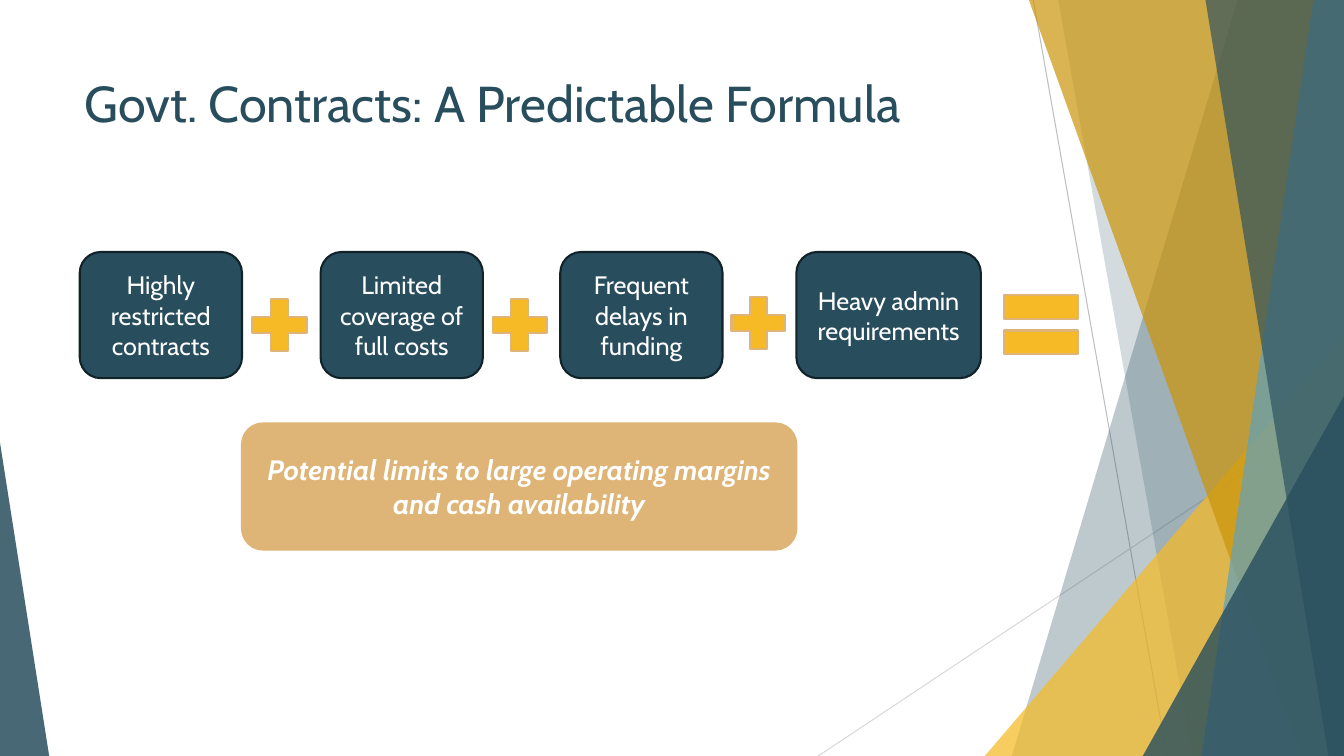
"""Build the slide on the predictable formula of government contracts."""
from dataclasses import dataclass

import lxml.etree
import pptx
import pptx.dml.color
import pptx.enum.shapes
import pptx.enum.text
import pptx.oxml.ns
import pptx.shapes.autoshape
import pptx.shapes.base
import pptx.slide
import pptx.text.text
import pptx.util

Cm = pptx.util.Cm
Kind = pptx.enum.shapes.MSO_SHAPE
Align = pptx.enum.text.PP_ALIGN
Anchor = pptx.enum.text.MSO_ANCHOR

WIDE, HIGH = 33.87, 19.05
FONT = "Cabin"
INK = {
    "teal": "284E5E", "edge": "122229", "gold": "F5BA26", "ochre": "CB9409",
    "sky": "61A1BC", "sand": "DEB477", "white": "FFFFFF",
    "gray": "BFBFBF", "pale": "D9D9D9",
}


@dataclass
class Ray:
    """A thin line that runs down to the foot of the slide."""
    left: float
    top: float
    foot: float
    ink: str


@dataclass
class Slab:
    """A full-height band from a slanted edge to the right side."""
    top: float
    foot: float
    ink: str
    alpha: int


@dataclass
class Wedge:
    """A right triangle that stands on the foot of the slide."""
    left: float
    top: float
    width: float
    apex: float
    ink: str
    alpha: int


@dataclass
class Item:
    """A preset shape of the formula, with optional text."""
    kind: Kind
    left: float
    top: float
    width: float
    height: float
    ink: str
    edge: str
    text: str = ""
    size: int = 18
    strong: bool = False


def term(left: float, width: float, text: str) -> Item:
    """Return one rounded box of the formula."""
    return Item(Kind.ROUNDED_RECTANGLE, left, 6.35, width, 3.18, "teal", "edge", text)


def plus(left: float, top: float) -> Item:
    """Return one plus sign of the formula."""
    return Item(Kind.MATH_PLUS, left, top, 1.85, 1.8, "gold", "sand")


RAYS = [Ray(26.04, 0, 29.41, "gray"), Ray(WIDE, 10.24, 20.62, "pale")]
DECOR = [
    Slab(31.19, 25.5, "teal", 30),
    Slab(26.67, 30.05, "teal", 20),
    Wedge(24.82, 8.46, 9.05, 1, "gold", 72),
    Slab(25.93, 32.79, "ochre", 70),
    Slab(33.1, 30.28, "sky", 70),
    Slab(30.38, 33.48, "teal", 65),
    Wedge(28.8, 9.98, 5.07, 1, "teal", 80),
    Wedge(0, 11.15, 1.24, 0, "teal", 85),
]
ITEMS = [
    term(2.01, 4.09, "Highly restricted contracts"),
    term(8.08, 4.09, "Limited coverage of full costs"),
    term(14.12, 4.09, "Frequent delays in funding"),
    term(20.07, 4.65, "Heavy admin requirements"),
    plus(6.12, 7.29),
    plus(12.17, 7.29),
    plus(18.19, 7.24),
    Item(Kind.MATH_EQUAL, 24.97, 6.91, 2.54, 2.54, "gold", "sand"),
    Item(Kind.ROUNDED_RECTANGLE, 6.1, 10.67, 13.97, 3.18, "sand", "sand",
         "Potential limits to large operating margins and cash availability",
         20, True),
]


def color(name: str) -> pptx.dml.color.RGBColor:
    """Return a named colour."""
    return pptx.dml.color.RGBColor.from_string(INK[name])


def write(frame: pptx.text.text.TextFrame, text: str, *, size: int, ink: str,
          align: Align = Align.CENTER, anchor: Anchor = Anchor.MIDDLE,
          strong: bool = False) -> None:
    """Fill a frame with one formatted paragraph."""
    frame.word_wrap = True
    frame.auto_size = pptx.enum.text.MSO_AUTO_SIZE.NONE
    frame.vertical_anchor = anchor
    para = frame.paragraphs[0]
    para.alignment = align
    run = para.add_run()
    run.text = text
    font = run.font
    font.name, font.size = FONT, pptx.util.Pt(size)
    font.bold = font.italic = strong
    font.color.rgb = color(ink)


def place(shape: pptx.shapes.base.BaseShape, left: float, top: float,
          width: float, height: float) -> None:
    """Set the bounds of a shape."""
    shape.left, shape.top = Cm(left), Cm(top)
    shape.width, shape.height = Cm(width), Cm(height)


def paint(shape: pptx.shapes.autoshape.Shape, ink: str, alpha: int) -> None:
    """Give a shape a see-through fill and no line."""
    shape.shadow.inherit = False
    shape.line.fill.background()
    shape.fill.solid()
    shape.fill.fore_color.rgb = color(ink)
    tone = shape.fill._xPr.find(".//" + pptx.oxml.ns.qn("a:srgbClr"))
    lxml.etree.SubElement(tone, pptx.oxml.ns.qn("a:alpha"), val=str(alpha * 1000))


def draw_ray(slide: pptx.slide.Slide, ray: Ray) -> None:
    """Draw a thin line."""
    line = slide.shapes.add_connector(
        pptx.enum.shapes.MSO_CONNECTOR.STRAIGHT,
        Cm(ray.left), Cm(ray.top), Cm(ray.foot), Cm(HIGH))
    line.line.color.rgb = color(ray.ink)
    line.line.width = pptx.util.Pt(0.75)
    lxml.etree.SubElement(line._element.spPr, pptx.oxml.ns.qn("a:effectLst"))


def draw_slab(slide: pptx.slide.Slide, slab: Slab) -> None:
    """Draw a slanted band."""
    pen = slide.shapes.build_freeform(Cm(slab.top), 0)
    edge = [(WIDE, 0), (WIDE, HIGH), (slab.foot, HIGH)]
    pen.add_line_segments([(Cm(x), Cm(y)) for x, y in edge], close=True)
    paint(pen.convert_to_shape(), slab.ink, slab.alpha)


def draw_wedge(slide: pptx.slide.Slide, wedge: Wedge) -> None:
    """Draw a right triangle."""
    shape = slide.shapes.add_shape(
        Kind.ISOSCELES_TRIANGLE, Cm(wedge.left), Cm(wedge.top),
        Cm(wedge.width), Cm(HIGH - wedge.top))
    shape.adjustments[0] = wedge.apex
    paint(shape, wedge.ink, wedge.alpha)


def draw_item(slide: pptx.slide.Slide, item: Item) -> None:
    """Draw a part of the formula."""
    shape = slide.shapes.add_shape(
        item.kind, Cm(item.left), Cm(item.top), Cm(item.width), Cm(item.height))
    shape.shadow.inherit = False
    shape.fill.solid()
    shape.fill.fore_color.rgb = color(item.ink)
    shape.line.color.rgb = color(item.edge)
    shape.line.width = pptx.util.Pt(1.5)
    if item.text:
        write(shape.text_frame, item.text, size=item.size, ink="white",
              strong=item.strong)


def main() -> None:
    """Build and save the slide."""
    deck = pptx.Presentation()
    deck.slide_width, deck.slide_height = Cm(WIDE), Cm(HIGH)
    slide = deck.slides.add_slide(deck.slide_layouts[5])
    for ray in RAYS:
        draw_ray(slide, ray)
    for part in DECOR:
        if isinstance(part, Slab):
            draw_slab(slide, part)
        else:
            draw_wedge(slide, part)
    title = slide.shapes.title
    place(title, 1.88, 1.7, 23.88, 3.66)
    write(title.text_frame, "Govt. Contracts: A Predictable Formula", size=36,
          ink="teal", align=Align.LEFT, anchor=Anchor.TOP)
    for item in ITEMS:
        draw_item(slide, item)
    deck.save("out.pptx")


if __name__ == "__main__":
    main()
